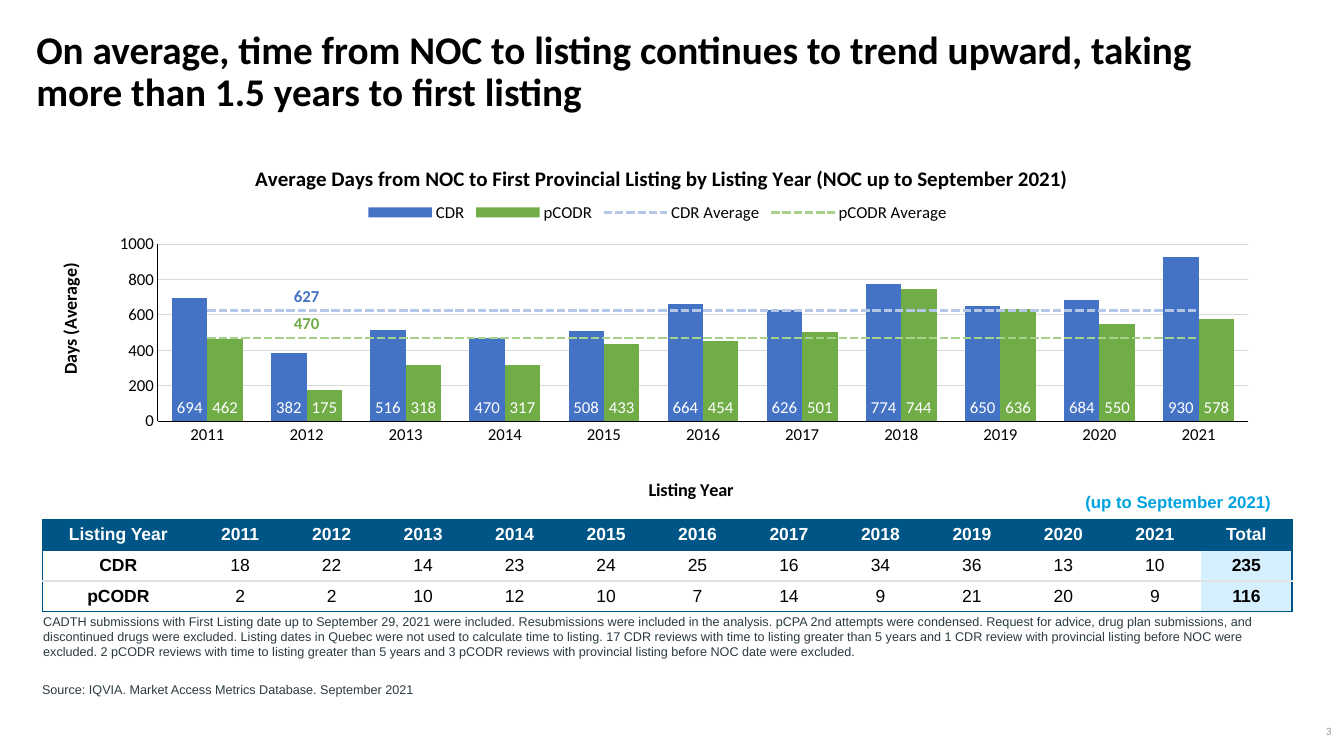
from lxml import etree
from pptx import Presentation
from pptx.chart import data
from pptx.dml.color import RGBColor
from pptx.enum import chart as kinds, dml, text
from pptx.oxml import ns
from pptx.util import Pt

BLACK = RGBColor(0x00, 0x00, 0x00)
WHITE = RGBColor(0xFF, 0xFF, 0xFF)
SLATE = RGBColor(0x2B, 0x3A, 0x42)
GREY = RGBColor(0x95, 0x9C, 0xA0)
RULE = RGBColor(0xDE, 0xE2, 0xE3)
GRID = RGBColor(0xD9, 0xD9, 0xD9)
NAVY = RGBColor(0x00, 0x55, 0x87)
CYAN = RGBColor(0x00, 0xA3, 0xE0)
PALE = RGBColor(0xD5, 0xEF, 0xFF)
BLUE = RGBColor(0x44, 0x72, 0xC4)
GREEN = RGBColor(0x70, 0xAD, 0x47)
LIGHT_BLUE = RGBColor(0xB4, 0xC7, 0xE7)
LIGHT_GREEN = RGBColor(0xA9, 0xD1, 0x8E)

YEARS = [str(year) for year in range(2011, 2022)]
DAYS = {
    "CDR": [694, 382, 516, 470, 508, 664, 626, 774, 650, 684, 930],
    "pCODR": [462, 175, 318, 317, 433, 454, 501, 744, 636, 550, 578],
    "CDR Average": [627] * len(YEARS),
    "pCODR Average": [470] * len(YEARS),
}
COUNTS = [
    ["Listing Year", *YEARS, "Total"],
    ["CDR", 18, 22, 14, 23, 24, 25, 16, 34, 36, 13, 10, 235],
    ["pCODR", 2, 2, 10, 12, 10, 7, 14, 9, 21, 20, 9, 116],
]
HEADLINE = ("On average, time from NOC to listing continues to trend upward, "
            "taking more than 1.5 years to first listing")
CHART_TITLE = ("Average Days from NOC to First Provincial Listing by Listing Year "
               "(NOC up to September 2021)")
METHOD = (
    "CADTH submissions with First Listing date up to September 29, 2021 were included. "
    "Resubmissions were included in the analysis. pCPA 2nd attempts were condensed. "
    "Request for advice, drug plan submissions, and discontinued drugs were excluded. "
    "Listing dates in Quebec were not used to calculate time to listing. "
    "17 CDR reviews with time to listing greater than 5 years and 1 CDR review with "
    "provincial listing before NOC were excluded. 2 pCODR reviews with time to listing "
    "greater than 5 years and 3 pCODR reviews with provincial listing before NOC date "
    "were excluded.")
SOURCE = "Source: IQVIA. Market Access Metrics Database. September 2021"


def assign(target, values):
    for name, value in values.items():
        setattr(target, name, value)


def set_font(font, size, color, name="Calibri", bold=False):
    assign(font, {"size": Pt(size), "name": name, "bold": bold})
    font.color.rgb = color


def set_layout(element, **places):
    """Fix a chart part at fractions of the chart area."""
    for old in element.findall(ns.qn("c:layout")):
        element.remove(old)
    layout = etree.Element(ns.qn("c:layout"))
    manual = etree.SubElement(layout, ns.qn("c:manualLayout"))
    if element.tag == ns.qn("c:plotArea"):
        etree.SubElement(manual, ns.qn("c:layoutTarget"), val="inner")
    for side in ("x", "y"):
        etree.SubElement(manual, ns.qn(f"c:{side}Mode"), val="edge")
    for side, share in places.items():
        etree.SubElement(manual, ns.qn(f"c:{side}"), val=str(share))
    overlay = element.find(ns.qn("c:overlay"))
    if overlay is None:
        element.insert(0, layout)
    else:
        overlay.addprevious(layout)


def move_to_lines(chart, first):
    """Turn the series from index first onward into lines on the same axes."""
    bars = chart.element.find(".//" + ns.qn("c:barChart"))
    lines = etree.Element(ns.qn("c:lineChart"))
    etree.SubElement(lines, ns.qn("c:grouping"), val="standard")
    etree.SubElement(lines, ns.qn("c:varyColors"), val="0")
    for series in bars.findall(ns.qn("c:ser"))[first:]:
        for flag in series.findall(ns.qn("c:invertIfNegative")):
            series.remove(flag)
        lines.append(series)
    etree.SubElement(lines, ns.qn("c:marker"), val="1")
    for axis in bars.findall(ns.qn("c:axId")):
        etree.SubElement(lines, ns.qn("c:axId"), val=axis.get("val"))
    # A parsed element carries the chart library's own classes.
    bars.addnext(ns_parse(lines))


def ns_parse(element):
    from pptx.oxml import parse_xml
    return parse_xml(etree.tostring(element))


def set_title(owner, words, size, **place):
    owner.text_frame.text = words
    set_font(owner.text_frame.paragraphs[0].runs[0].font, size, BLACK, bold=True)
    set_layout(owner._element, **place)


def set_border(cell, side, color):
    line = etree.SubElement(cell._tc.get_or_add_tcPr(), ns.qn(f"a:ln{side}"), w=str(Pt(1)))
    if color is None:
        etree.SubElement(line, ns.qn("a:noFill"))
    else:
        fill = etree.SubElement(line, ns.qn("a:solidFill"))
        etree.SubElement(fill, ns.qn("a:srgbClr"), val=str(color))


class ListingPage:
    """Holds the text style and the current slide."""

    def __init__(self, deck):
        self.page = deck.slides.add_slide(deck.slide_layouts[5])
        self.flush = dict.fromkeys(
            ("margin_left", "margin_top", "margin_right", "margin_bottom"), 0)

    def title(self, words, place):
        box = self.page.shapes.title
        assign(box, dict(zip(("left", "top", "width", "height"), map(Pt, place))))
        assign(box.text_frame, {"text": words, "word_wrap": True,
                                "auto_size": text.MSO_AUTO_SIZE.NONE,
                                "vertical_anchor": text.MSO_ANCHOR.MIDDLE})
        para = box.text_frame.paragraphs[0]
        assign(para, {"alignment": text.PP_ALIGN.LEFT, "line_spacing": 0.9})
        set_font(para.font, 28, BLACK, bold=True)

    def text(self, words, place, font, align=text.PP_ALIGN.LEFT, **frame):
        box = self.page.shapes.add_textbox(*map(Pt, place))
        assign(box.text_frame, {"text": words, "word_wrap": True, **frame})
        para = box.text_frame.paragraphs[0]
        para.alignment = align
        set_font(para.font, **font)

    def note(self, words, place):
        self.text(words, place, {"size": 9, "color": SLATE, "name": "Arial"},
                  **{**self.flush, "margin_left": Pt(7.2),
                     "vertical_anchor": text.MSO_ANCHOR.BOTTOM})

    def chart(self, place):
        table = data.CategoryChartData(number_format="0")
        table.categories = YEARS
        for name, values in DAYS.items():
            table.add_series(name, values)
        chart = self.page.shapes.add_chart(
            kinds.XL_CHART_TYPE.COLUMN_CLUSTERED, *map(Pt, place), table).chart
        set_font(chart.font, 12, BLACK)
        move_to_lines(chart, 2)
        bars, lines = chart.plots
        assign(bars, {"gap_width": 80, "overlap": 0, "vary_by_categories": False})
        for series, color in zip(bars.series, (BLUE, GREEN)):
            series.format.fill.solid()
            series.format.fill.fore_color.rgb = color
            labels = series.data_labels
            assign(labels, {"show_value": True,
                            "position": kinds.XL_LABEL_POSITION.INSIDE_BASE})
            set_font(labels.font, 12, WHITE)
        for series, color, ink in zip(lines.series, (LIGHT_BLUE, LIGHT_GREEN), (BLUE, GREEN)):
            series.smooth = False
            series.marker.style = kinds.XL_MARKER_STYLE.NONE
            assign(series.format.line, {"width": Pt(2),
                                        "dash_style": dml.MSO_LINE.SQUARE_DOT})
            series.format.line.color.rgb = color
            series.data_labels.show_value = False
            label = series.points[1].data_label
            set_font(label.font, 12, ink, bold=True)
            label.position = kinds.XL_LABEL_POSITION.ABOVE
        for axis in (chart.category_axis, chart.value_axis):
            axis.major_tick_mark = kinds.XL_TICK_MARK.NONE
            set_font(axis.tick_labels.font, 12, BLACK)
            axis.format.line.width = Pt(0.75)
            axis.format.line.color.rgb = BLACK
        days = chart.value_axis
        assign(days, {"minimum_scale": 0, "maximum_scale": 1000, "major_unit": 200})
        assign(days.tick_labels, {"number_format": "0", "number_format_is_linked": False})
        days.major_gridlines.format.line.width = Pt(0.75)
        days.major_gridlines.format.line.color.rgb = GRID
        set_title(chart.chart_title, CHART_TITLE, 15, x=0.17, y=0.05)
        set_title(chart.category_axis.axis_title, "Listing Year", 13, x=0.49, y=0.92)
        set_title(days.axis_title, "Days (Average)", 13, x=0.01, y=0.33)
        body = days.axis_title._element.find(".//" + ns.qn("a:bodyPr"))
        assign_turn = {"rot": "-5400000", "vert": "horz"}
        body.attrib.update(assign_turn)
        chart.has_legend = True
        assign(chart.legend, {"position": kinds.XL_LEGEND_POSITION.TOP,
                              "include_in_layout": False})
        set_font(chart.legend.font, 12, BLACK)
        set_layout(chart.legend._element, x=0.26, y=0.16, w=0.48, h=0.07)
        set_layout(chart.element.find(".//" + ns.qn("c:plotArea")),
                   x=0.094, y=0.283, w=0.886, h=0.49)

    def table(self, rows, place):
        last = len(rows[0]) - 1
        table = self.page.shapes.add_table(len(rows), last + 1, *map(Pt, place)).table
        assign(table, {"first_row": False, "horz_banding": False})
        for index, column in enumerate(table.columns):
            column.width = Pt(65.35 if index else 108.7)
        edges = (NAVY, NAVY, RULE, NAVY)
        for r, row in enumerate(rows):
            table.rows[r].height = Pt(22.1)
            for c, value in enumerate(row):
                cell = table.cell(r, c)
                assign(cell, {"text": str(value), **self.flush,
                              "vertical_anchor": text.MSO_ANCHOR.MIDDLE})
                para = cell.text_frame.paragraphs[0]
                para.alignment = text.PP_ALIGN.CENTER
                set_font(para.font, 12.5, BLACK if r else WHITE, "Arial",
                         bold=r == 0 or c in (0, last))
                set_border(cell, "L", None if c else NAVY)
                set_border(cell, "R", NAVY if c == last else None)
                set_border(cell, "T", edges[r])
                set_border(cell, "B", edges[r + 1])
                if r and c < last:
                    cell.fill.background()
                else:
                    cell.fill.solid()
                    cell.fill.fore_color.rgb = PALE if r else NAVY


def main():
    deck = Presentation()
    assign(deck, {"slide_width": Pt(960), "slide_height": Pt(540)})
    page = ListingPage(deck)
    page.title(HEADLINE, (18.7, 0, 902, 104.4))
    page.chart((30.2, 101.5, 879, 260.6))
    page.note(METHOD, (23.8, 438.5, 892.8, 32.4))
    page.table(COUNTS, (30.2, 370.8, 892.9, 66.3))
    page.text("(up to September 2021)", (768.2, 347.8, 148.3, 21.6),
              {"size": 12, "color": CYAN, "name": "Arial", "bold": True}, word_wrap=False)
    page.note(SOURCE, (23, 487.4, 892.8, 10.8))
    page.text("3", (923, 515.5, 28.1, 13.7), {"size": 8, "color": GREY},
              text.PP_ALIGN.RIGHT, vertical_anchor=text.MSO_ANCHOR.MIDDLE, **page.flush)
    deck.save("out.pptx")


if __name__ == "__main__":
    main()
